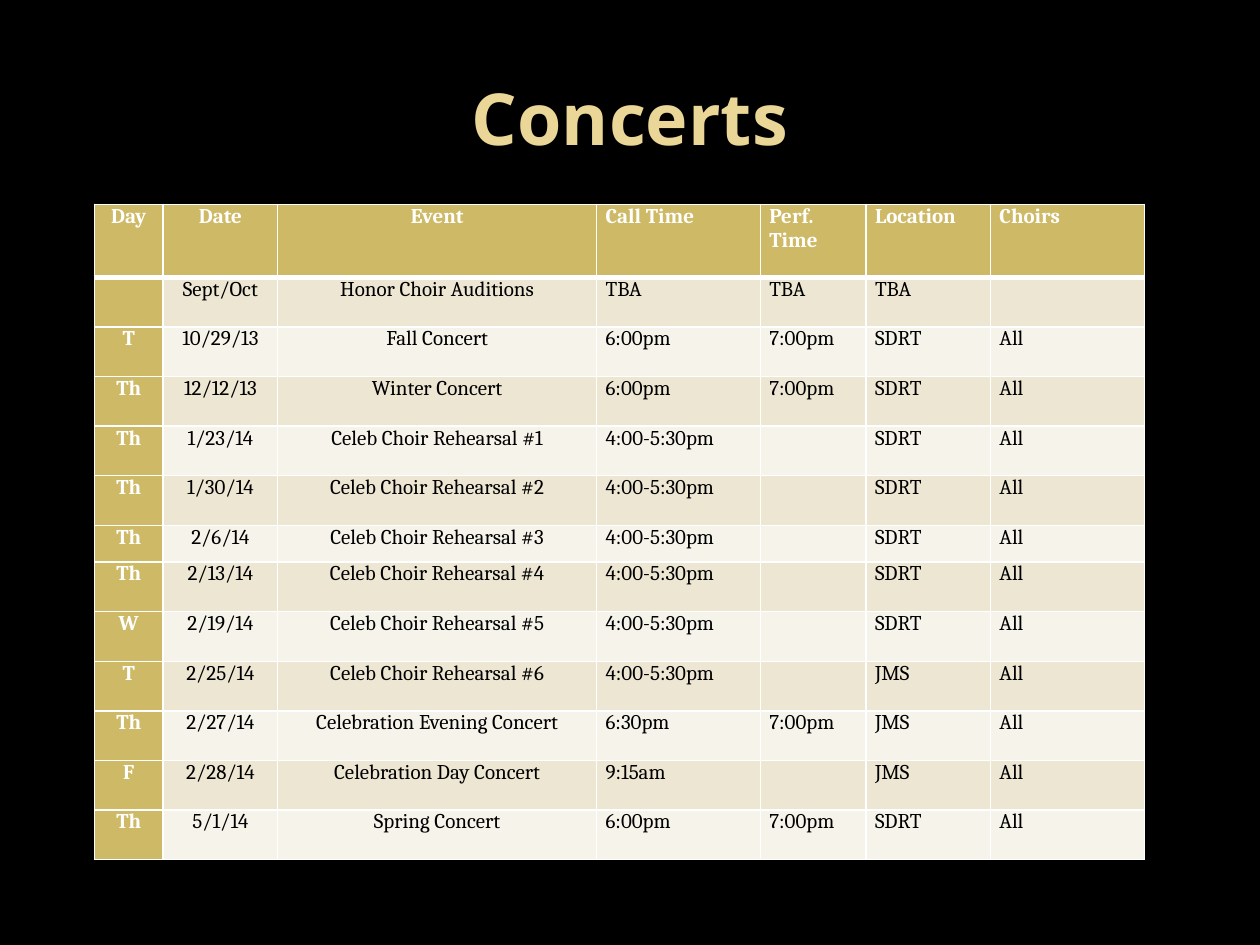
import dataclasses

import lxml.etree
import pptx
import pptx.dml.color
import pptx.enum.text
import pptx.oxml.ns
import pptx.util

Cm = pptx.util.Cm
Pt = pptx.util.Pt
ALIGN = pptx.enum.text.PP_ALIGN


@dataclasses.dataclass(frozen=True)
class Theme:
    back: str = "000000"
    title: str = "EAD696"
    gold: str = "CEB966"
    bands: tuple[str, str] = ("EDE6D3", "F6F3EA")
    ink: str = "000000"
    white: str = "FFFFFF"
    head_font: str = "Noto Sans"
    body_font: str = "Cambria"
    title_size: float = 41
    body_size: float = 12
    thin: float = 1
    thick: float = 3


@dataclasses.dataclass(frozen=True)
class Event:
    day: str
    date: str
    name: str
    call: str
    start: str
    place: str
    choirs: str = "All"
    height: float = 1.0


THEME = Theme()
WIDTHS = (1.39, 2.31, 6.43, 3.3, 2.13, 2.51, 3.1)
CENTRED = 3

EVENTS = [
    Event("Day", "Date", "Event", "Call Time", "Perf. Time", "Location", "Choirs", 1.47),
    Event("", "Sept/Oct", "Honor Choir Auditions", "TBA", "TBA", "TBA", ""),
    Event("T", "10/29/13", "Fall Concert", "6:00pm", "7:00pm", "SDRT"),
    Event("Th", "12/12/13", "Winter Concert", "6:00pm", "7:00pm", "SDRT"),
    Event("Th", "1/23/14", "Celeb Choir Rehearsal #1", "4:00-5:30pm", "", "SDRT"),
    Event("Th", "1/30/14", "Celeb Choir Rehearsal #2", "4:00-5:30pm", "", "SDRT"),
    Event("Th", "2/6/14", "Celeb Choir Rehearsal #3", "4:00-5:30pm", "", "SDRT", height=0.74),
    Event("Th", "2/13/14", "Celeb Choir Rehearsal #4", "4:00-5:30pm", "", "SDRT"),
    Event("W", "2/19/14", "Celeb Choir Rehearsal #5", "4:00-5:30pm", "", "SDRT"),
    Event("T", "2/25/14", "Celeb Choir Rehearsal #6", "4:00-5:30pm", "", "JMS"),
    Event("Th", "2/27/14", "Celebration Evening Concert", "6:30pm", "7:00pm", "JMS"),
    Event("F", "2/28/14", "Celebration Day Concert", "9:15am", "", "JMS"),
    Event("Th", "5/1/14", "Spring Concert", "6:00pm", "7:00pm", "SDRT"),
]


def paint(fill, shade: str) -> None:
    fill.solid()
    fill.fore_color.rgb = pptx.dml.color.RGBColor.from_string(shade)


def style(para, face: str, size: float, shade: str, bold: bool, align) -> None:
    para.alignment = align
    para.font.name = face
    para.font.size = Pt(size)
    para.font.bold = bold
    paint(para.font.fill, shade)


def edge(cell, side: str, width: float) -> None:
    qn = pptx.oxml.ns.qn
    props = cell._tc.get_or_add_tcPr()
    line = lxml.etree.SubElement(props, qn(f"a:ln{side}"), w=str(Pt(width)))
    fill = lxml.etree.SubElement(line, qn("a:solidFill"))
    lxml.etree.SubElement(fill, qn("a:srgbClr"), val=THEME.white)


def draw_cell(cell, text: str, row: int, col: int) -> None:
    cell.margin_left = cell.margin_right = Cm(0.18)
    cell.margin_top = cell.margin_bottom = 0
    thick_side = {0: "B", 1: "T"}.get(row)
    for side in "LRTB":
        edge(cell, side, THEME.thick if side == thick_side else THEME.thin)
    label = row == 0 or col == 0
    paint(cell.fill, THEME.gold if label else THEME.bands[(row - 1) % 2])
    cell.text = text
    style(
        cell.text_frame.paragraphs[0],
        THEME.body_font,
        THEME.body_size,
        THEME.white if label else THEME.ink,
        label,
        ALIGN.CENTER if col < CENTRED else ALIGN.LEFT,
    )


def draw_title(slide, text: str) -> None:
    box = slide.shapes.add_textbox(Cm(1.27), Cm(0.76), Cm(22.86), Cm(3.18))
    frame = box.text_frame
    frame.word_wrap = True
    frame.vertical_anchor = pptx.enum.text.MSO_ANCHOR.MIDDLE
    frame.text = text
    style(frame.paragraphs[0], THEME.head_font, THEME.title_size, THEME.title, True, ALIGN.CENTER)


def draw_table(slide, events: list[Event]) -> None:
    high = sum(event.height for event in events)
    table = slide.shapes.add_table(
        len(events), len(WIDTHS), Cm(1.9), Cm(4.12), Cm(sum(WIDTHS)), Cm(high)
    ).table
    table.first_row = table.horz_banding = False
    for column, width in zip(table.columns, WIDTHS):
        column.width = Cm(width)
    for row, event in enumerate(events):
        table.rows[row].height = Cm(event.height)
        for col, text in enumerate(dataclasses.astuple(event)[: len(WIDTHS)]):
            draw_cell(table.cell(row, col), text, row, col)


def main() -> None:
    deck = pptx.Presentation()
    deck.slide_width, deck.slide_height = Cm(25.4), Cm(19.05)
    slide = deck.slides.add_slide(deck.slide_layouts[6])
    paint(slide.background.fill, THEME.back)
    draw_title(slide, "Concerts")
    draw_table(slide, EVENTS)
    deck.save("out.pptx")


if __name__ == "__main__":
    main()
